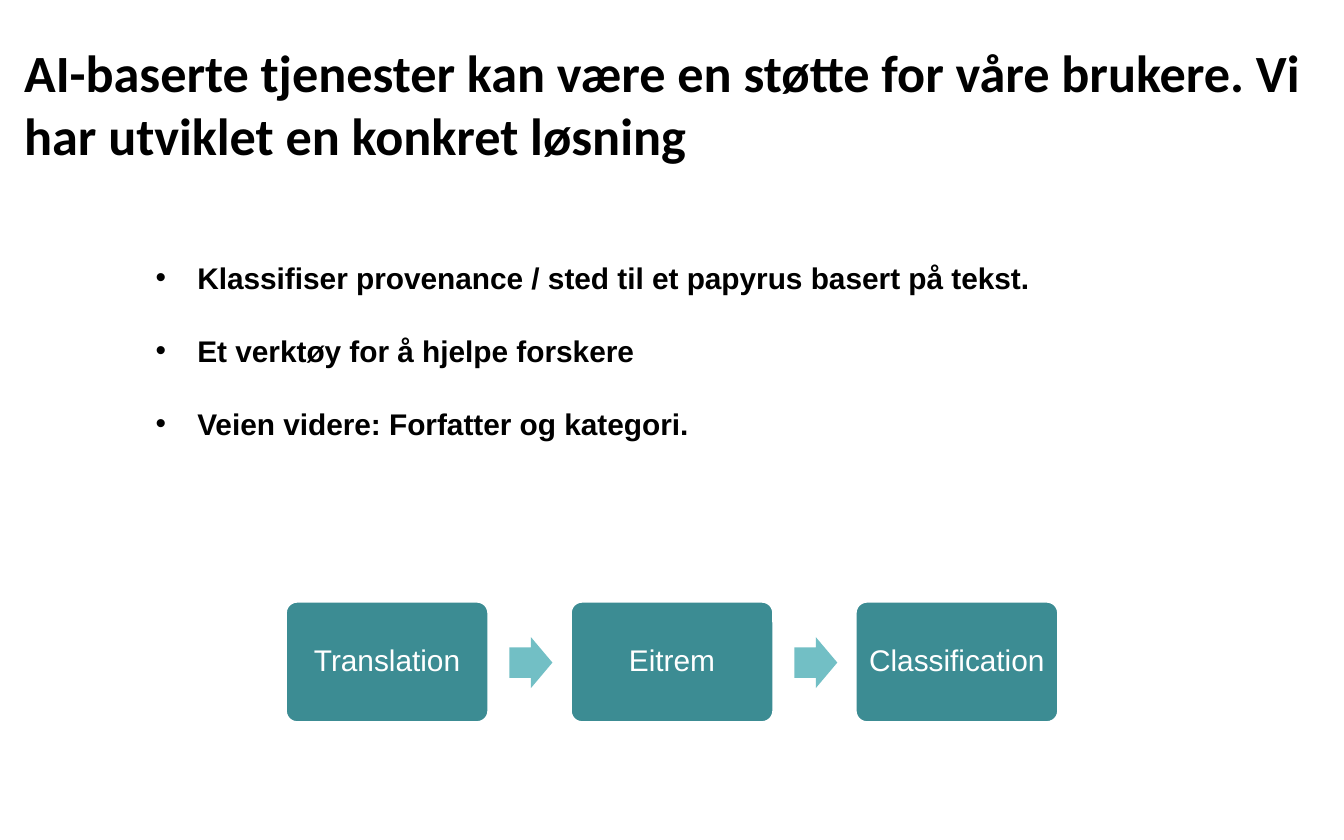
"""Build a slide on an AI service for papyri, with three points and a flow of steps."""
from lxml import etree
from pptx import Presentation
from pptx import util as u
from pptx.dml.color import RGBColor
from pptx.enum import shapes, text
from pptx.oxml import ns

HUES = {"ink": "000000", "paper": "FFFFFF", "box": "3C8C93", "arrow": "72BFC5"}


def write(para, words, size, face, hue, bold=False):
    """Add one run of text to a paragraph."""
    run = para.add_run()
    run.text = words
    font = run.font
    font.size, font.name, font.bold = u.Pt(size), face, bold
    font.color.rgb = RGBColor.from_string(HUES[hue])


def draw(kind, left, top, width, height, hue):
    """Add a filled shape without a shadow."""
    shape = slide.shapes.add_shape(
        kind, u.Inches(left), u.Inches(top), u.Inches(width), u.Inches(height))
    shape.shadow.inherit = False
    shape.fill.solid()
    shape.fill.fore_color.rgb = RGBColor.from_string(HUES[hue])
    return shape


deck = Presentation()
deck.slide_width, deck.slide_height = u.Inches(10), u.Inches(6.25)
slide = deck.slides.add_slide(deck.slide_layouts[5])

title = slide.shapes.title
title.left, title.top = u.Inches(0.08), u.Inches(0.25)
title.width, title.height = u.Inches(9.83), u.Inches(1.04)
frame = title.text_frame
frame.word_wrap = True
frame.auto_size = text.MSO_AUTO_SIZE.SHAPE_TO_FIT_TEXT
frame.vertical_anchor = text.MSO_ANCHOR.TOP
para = frame.paragraphs[0]
para.alignment = text.PP_ALIGN.LEFT
write(para, "AI-baserte tjenester kan være en støtte for våre brukere. "
      "Vi har utviklet en konkret løsning", 28, "Calibri", "ink", True)

points = [
    "Klassifiser provenance / sted til et papyrus basert på tekst.",
    "Et verktøy for å hjelpe forskere",
    "Veien videre: Forfatter og kategori.",
]
body = slide.shapes.add_textbox(
    u.Inches(1.06), u.Inches(1.88), u.Inches(7.85), u.Inches(1.72))
frame = body.text_frame
frame.word_wrap = True
for i, point in enumerate(points):
    para = frame.add_paragraph() if i else frame.paragraphs[0]
    props = para._p.get_or_add_pPr()
    props.set("marL", str(u.Inches(0.31)))
    props.set("indent", str(u.Inches(-0.31)))
    face = etree.SubElement(props, ns.qn("a:buFont"))
    face.set("typeface", "Arial")
    mark = etree.SubElement(props, ns.qn("a:buChar"))
    mark.set("char", "•")
    if i:
        para.space_before = u.Pt(20)
    write(para, point, 16, "Arial", "ink", True)

steps = ["Translation", "Eitrem", "Classification"]
for i, step in enumerate(steps):
    left = 2.12 + 2.12 * i
    box = draw(shapes.MSO_SHAPE.ROUNDED_RECTANGLE, left, 4.47, 1.52, 0.91, "box")
    box.adjustments[0] = 0.1
    box.line.color.rgb = RGBColor.from_string(HUES["paper"])
    box.line.width = u.Pt(2)
    frame = box.text_frame
    frame.word_wrap = True
    frame.vertical_anchor = text.MSO_ANCHOR.MIDDLE
    frame.margin_left = frame.margin_right = u.Inches(0.07)
    frame.margin_top = frame.margin_bottom = u.Inches(0.07)
    para = frame.paragraphs[0]
    para.alignment = text.PP_ALIGN.CENTER
    para.line_spacing = 0.9
    write(para, step, 16, "Arial", "paper")
    if i < len(steps) - 1:
        arrow = draw(shapes.MSO_SHAPE.RIGHT_ARROW, left + 1.67, 4.74, 0.32, 0.38, "arrow")
        arrow.adjustments[0] = 0.6
        arrow.adjustments[1] = 0.5
        arrow.line.fill.background()

deck.save("out.pptx")
